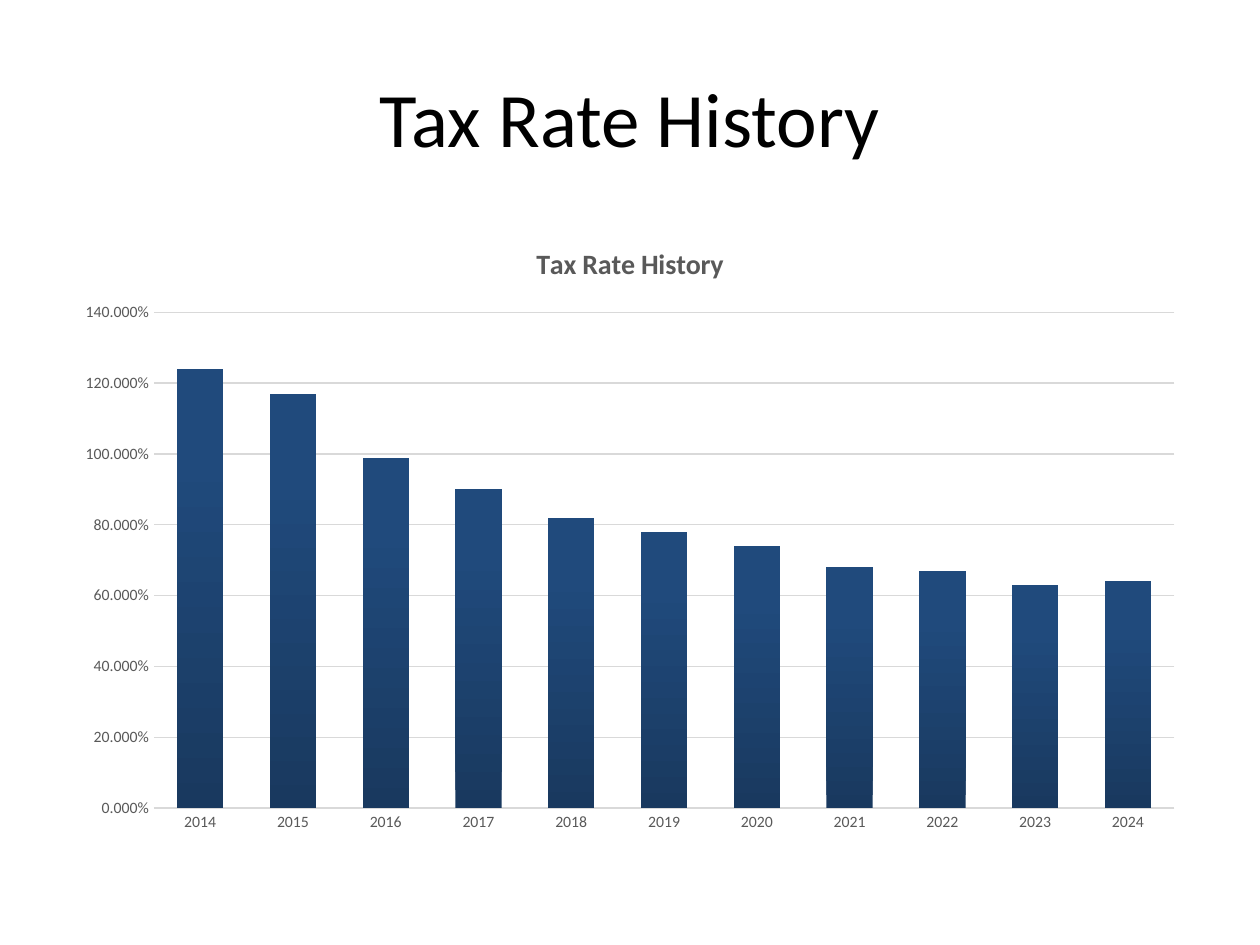
from lxml import etree
from pptx import Presentation
from pptx.chart.data import CategoryChartData
from pptx.dml.color import RGBColor
from pptx.enum import chart as chart_enum, text
from pptx.oxml.ns import qn
from pptx.util import Inches, Pt

FONT = "Calibri"
HEADING = "Tax Rate History"
BLACK = RGBColor(0x00, 0x00, 0x00)
GRAY = RGBColor(0x59, 0x59, 0x59)
LIGHT_GRAY = RGBColor(0xD9, 0xD9, 0xD9)
BAR_STOPS = [
    (0, RGBColor(0x19, 0x39, 0x5F)),
    (80, RGBColor(0x20, 0x4A, 0x7C)),
    (100, RGBColor(0x1E, 0x4A, 0x7E)),
]
FIRST_YEAR = 2014
TAX_RATES = [1.24, 1.17, 0.99, 0.9, 0.82, 0.78, 0.74, 0.68, 0.67, 0.63, 0.64]


def style_font(font, size, color, bold=False):
    font.name = FONT
    font.size = Pt(size)
    font.bold = bold
    font.color.rgb = color


def style_line(line, width):
    line.color.rgb = LIGHT_GRAY
    line.width = Pt(width)


def add_title(slide):
    box = slide.shapes.add_textbox(Inches(0.5), Inches(0.3), Inches(9), Inches(1.25))
    frame = box.text_frame
    frame.word_wrap = True
    frame.vertical_anchor = text.MSO_ANCHOR.MIDDLE
    paragraph = frame.paragraphs[0]
    paragraph.text = HEADING
    paragraph.alignment = text.PP_ALIGN.CENTER
    style_font(paragraph.font, 44, BLACK)


def fill_upward_gradient(series, stops):
    """Fill the bars with a gradient whose first stop is at the bottom."""
    series.format.fill.gradient()
    gradient = series.format.fill._xPr.find(qn("a:gradFill"))
    for child in list(gradient):
        gradient.remove(child)
    stop_list = etree.SubElement(gradient, qn("a:gsLst"))
    for position, color in stops:
        stop = etree.SubElement(stop_list, qn("a:gs"), pos=str(position * 1000))
        etree.SubElement(stop, qn("a:srgbClr"), val=str(color))
    etree.SubElement(gradient, qn("a:lin"), ang=str(270 * 60000), scaled="0")


def style_axes(chart):
    category_axis, value_axis = chart.category_axis, chart.value_axis
    for axis in (category_axis, value_axis):
        axis.major_tick_mark = chart_enum.XL_TICK_MARK.NONE
        axis.minor_tick_mark = chart_enum.XL_TICK_MARK.NONE
        style_font(axis.tick_labels.font, 9, GRAY)
    style_line(category_axis.format.line, 1)
    value_axis.format.line.fill.background()
    value_axis.has_major_gridlines = True
    style_line(value_axis.major_gridlines.format.line, 0.75)
    value_axis.tick_labels.number_format = "0.000%"
    value_axis.tick_labels.number_format_is_linked = False


def add_rate_chart(slide):
    data = CategoryChartData(number_format="0.000%")
    data.categories = [str(FIRST_YEAR + i) for i in range(len(TAX_RATES))]
    data.add_series("Series 1", TAX_RATES)
    chart = slide.shapes.add_chart(
        chart_enum.XL_CHART_TYPE.COLUMN_CLUSTERED,
        Inches(0.5), Inches(1.75), Inches(9), Inches(4.95), data,
    ).chart
    style_font(chart.font, 10, BLACK)
    chart.has_legend = False
    chart.has_title = True
    chart.chart_title.include_in_layout = False
    paragraph = chart.chart_title.text_frame.paragraphs[0]
    paragraph.text = HEADING
    style_font(paragraph.font, 16, GRAY, bold=True)
    style_axes(chart)
    plot = chart.plots[0]
    plot.vary_by_categories = False
    plot.gap_width = 100
    plot.overlap = -24
    fill_upward_gradient(plot.series[0], BAR_STOPS)


def main():
    presentation = Presentation()
    presentation.slide_width = Inches(10)
    presentation.slide_height = Inches(7.5)
    slide = presentation.slides.add_slide(presentation.slide_layouts[6])
    add_title(slide)
    add_rate_chart(slide)
    presentation.save("out.pptx")


if __name__ == "__main__":
    main()
